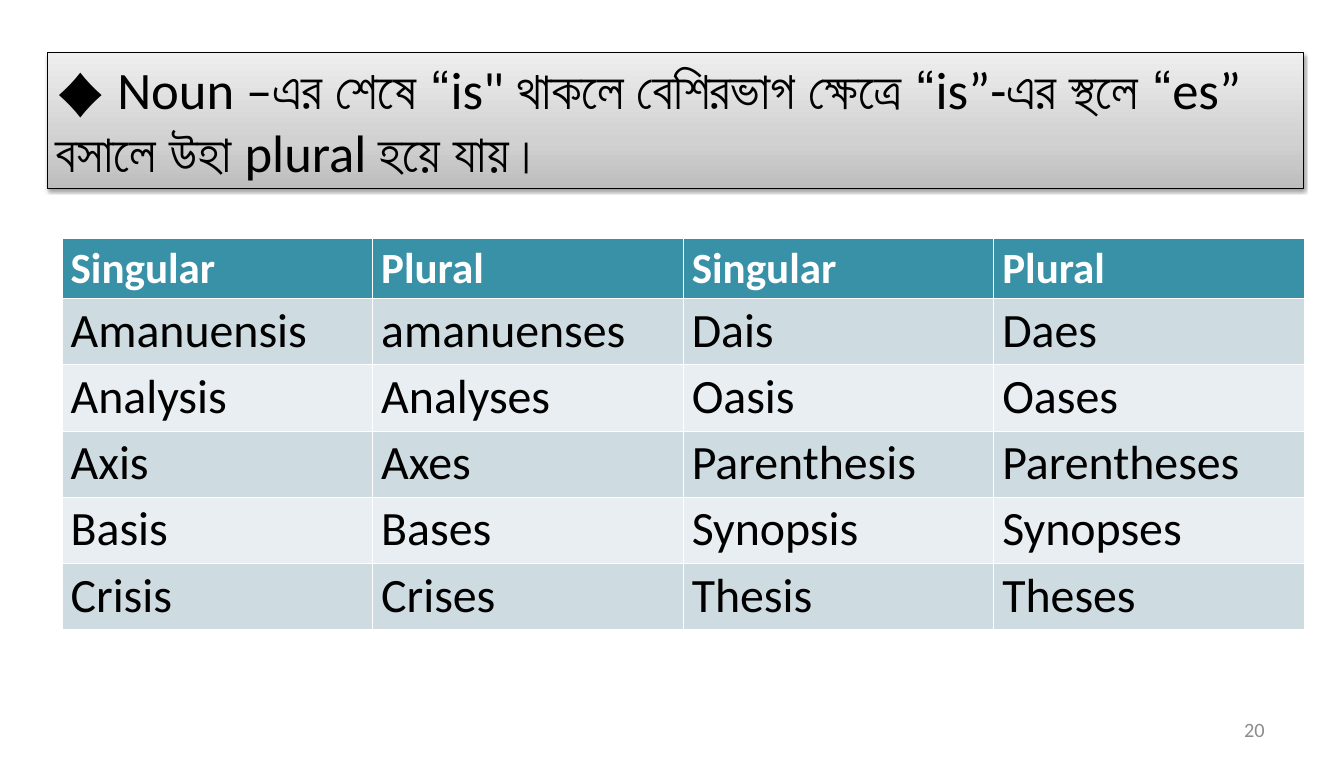
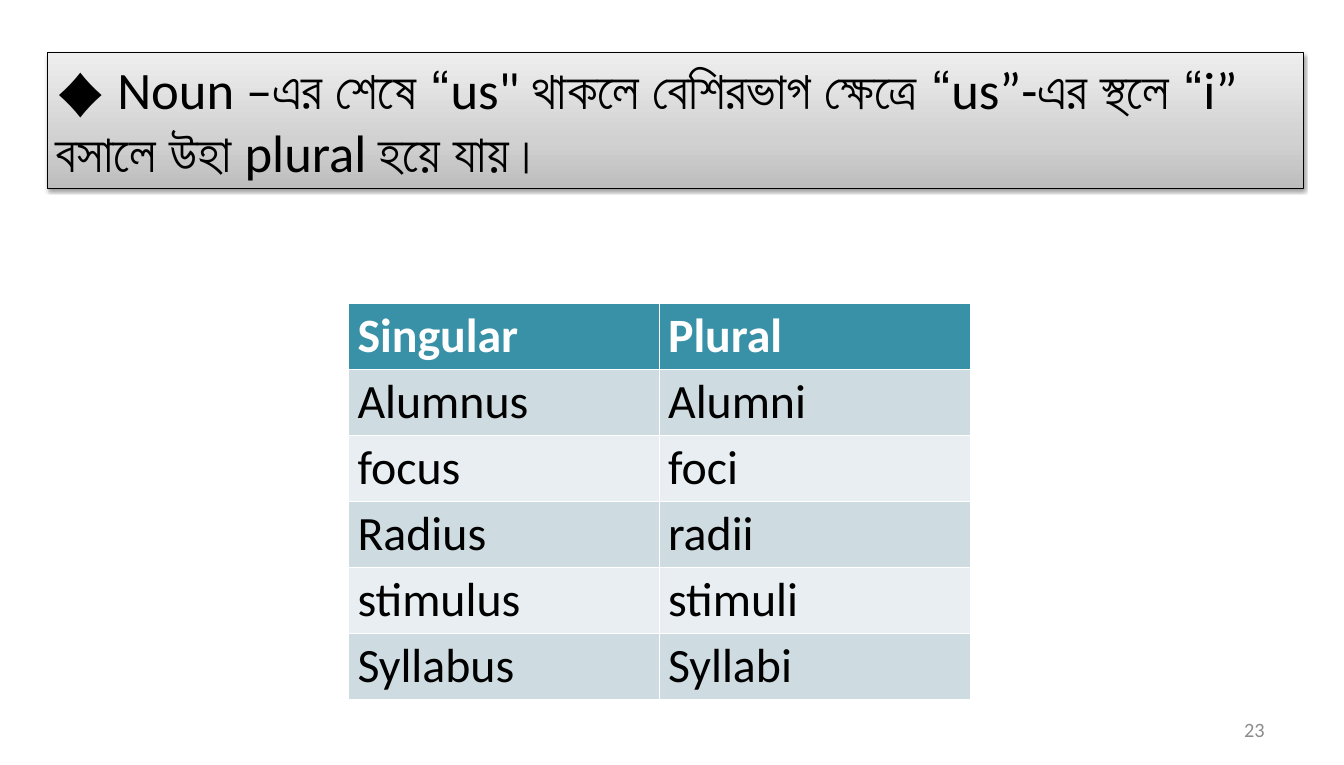
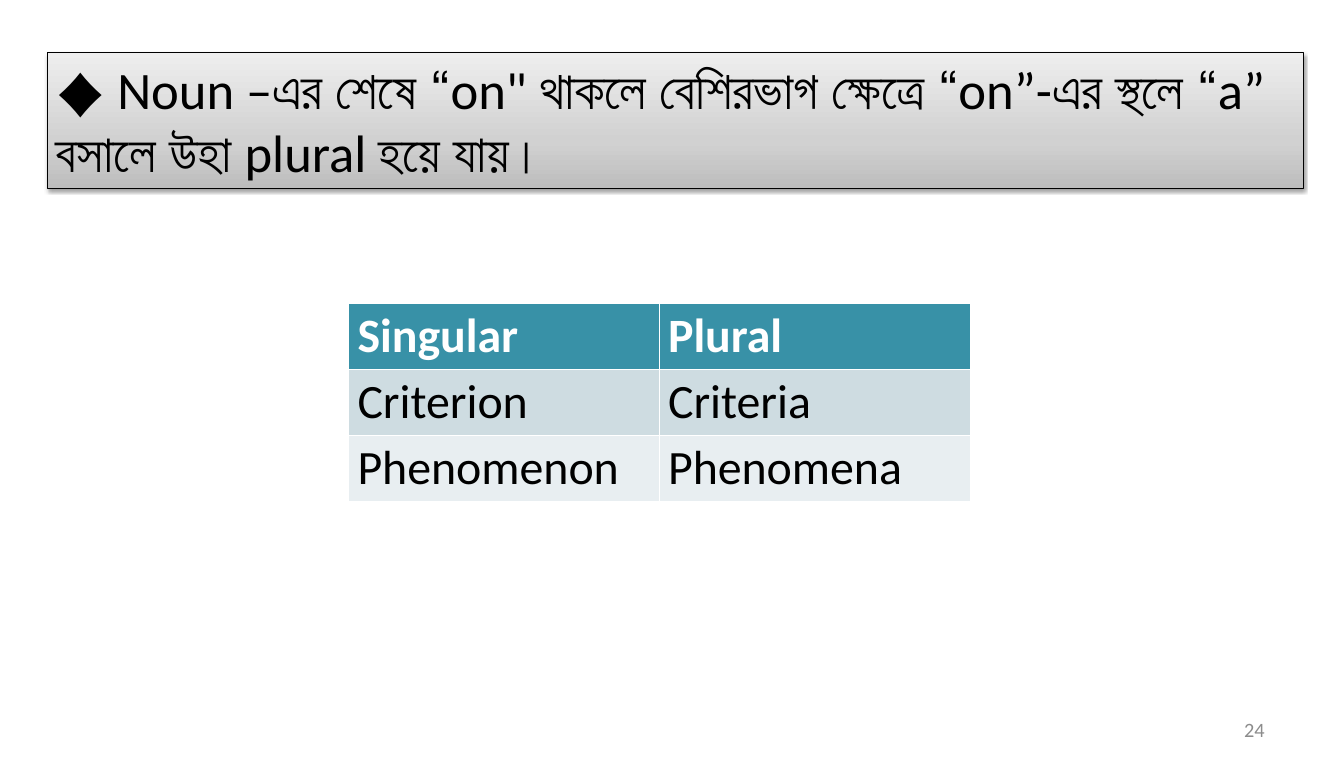
"""Build three grammar slides on irregular plurals, each with a rule and a word table."""
import dataclasses

import lxml.etree
import pptx
import pptx.dml.color
import pptx.enum.text
import pptx.oxml.ns
import pptx.util

Inches = pptx.util.Inches
Pt = pptx.util.Pt
Color = pptx.dml.color.RGBColor.from_string
qn = pptx.oxml.ns.qn


@dataclasses.dataclass(frozen=True)
class Theme:
    text_font: str = "Calibri"
    mark_font: str = "League Spartan"
    ink: str = "000000"
    paper: str = "FFFFFF"
    header: str = "3891A7"
    bands: tuple = ("CEDCE1", "E8EEF1")
    number: str = "8C8C8C"
    gradient: tuple = ((0, "BDBDBD"), (35, "D1D1D1"), (100, "EEEEEE"))
    mark_size: int = 41
    rule_size: int = 44
    word_size: int = 40
    number_size: int = 17


THEME = Theme()
COLUMN_WIDTH = 7.21 / 2
ROW_HEIGHT = 4.6 / 6
HEADINGS = ("Singular", "Plural")

LESSONS = [
    {
        "number": 20, "ending": "is", "plural": "es",
        "at": (0.72, 2.77), "header_size": 36, "header_height": 0.7,
        "words": [
            ("Amanuensis", "amanuenses", "Dais", "Daes"),
            ("Analysis", "Analyses", "Oasis", "Oases"),
            ("Axis", "Axes", "Parenthesis", "Parentheses"),
            ("Basis", "Bases", "Synopsis", "Synopses"),
            ("Crisis", "Crises", "Thesis", "Theses"),
        ],
    },
    {
        "number": 23, "ending": "us", "plural": "i",
        "at": (4.05, 3.52), "header_size": 40, "header_height": ROW_HEIGHT,
        "words": [
            ("Alumnus", "Alumni"),
            ("focus", "foci"),
            ("Radius", "radii"),
            ("stimulus", "stimuli"),
            ("Syllabus", "Syllabi"),
        ],
    },
    {
        "number": 24, "ending": "on", "plural": "a",
        "at": (4.05, 3.52), "header_size": 40, "header_height": ROW_HEIGHT,
        "words": [("Criterion", "Criteria"), ("Phenomenon", "Phenomena")],
    },
]


def add_span(para, text, size, color, font=THEME.text_font, bold=False):
    span = para.add_run()
    span.text = text
    span.font.name = font
    span.font.size = Pt(size)
    span.font.bold = bold
    span.font.color.rgb = Color(color)


def add_color(parent, color):
    return lxml.etree.SubElement(parent, qn("a:srgbClr"), val=color)


deck = pptx.Presentation()
deck.slide_width = Inches(15.6)
deck.slide_height = Inches(8.88)
title_only = deck.slide_layouts.get_by_name("Title Only")

for lesson in LESSONS:
    page = deck.slides.add_slide(title_only)

    rule = page.shapes.title
    rule.left, rule.top = Inches(0.55), Inches(0.61)
    rule.width, rule.height = Inches(14.58), Inches(1.58)
    rule.fill.gradient()
    rule.fill.gradient_angle = 90
    rule.line.color.rgb = Color(THEME.ink)
    rule.line.width = Pt(0.75)
    properties = rule.element.spPr
    stops = properties.find(".//" + qn("a:gsLst"))
    stops.clear()
    for percent, color in THEME.gradient:
        stop = lxml.etree.SubElement(stops, qn("a:gs"), pos=str(percent * 1000))
        add_color(stop, color)
    effects = lxml.etree.SubElement(properties, qn("a:effectLst"))
    shadow = lxml.etree.SubElement(
        effects, qn("a:outerShdw"), blurRad=str(Pt(3.1)), dist=str(Pt(1.6)),
        dir="5400000", rotWithShape="0")
    lxml.etree.SubElement(add_color(shadow, THEME.ink), qn("a:alpha"), val="38000")

    frame = rule.text_frame
    frame.word_wrap = True
    frame.auto_size = pptx.enum.text.MSO_AUTO_SIZE.SHAPE_TO_FIT_TEXT
    frame.vertical_anchor = pptx.enum.text.MSO_ANCHOR.TOP
    frame.margin_left = frame.margin_right = Inches(0.1)
    frame.margin_top = frame.margin_bottom = Inches(0.05)
    para = frame.paragraphs[0]
    para.alignment = pptx.enum.text.PP_ALIGN.LEFT
    add_span(para, "♦ ", THEME.mark_size, THEME.ink, THEME.mark_font)
    ending, plural = lesson["ending"], lesson["plural"]
    add_span(
        para,
        f"Noun –এর শেষে “{ending}\" থাকলে বেশিরভাগ ক্ষেত্রে “{ending}”-এর স্থলে "
        f"“{plural}” বসালে উহা plural হয়ে যায়।",
        THEME.rule_size, THEME.ink)

    words = lesson["words"]
    column_count = len(words[0])
    rows = [HEADINGS * (column_count // 2)] + words
    left, top = lesson["at"]
    table = page.shapes.add_table(
        len(rows), column_count, Inches(left), Inches(top),
        Inches(COLUMN_WIDTH * column_count),
        Inches(lesson["header_height"] + ROW_HEIGHT * len(words))).table
    for column in table.columns:
        column.width = Inches(COLUMN_WIDTH)
    for row_index, row in enumerate(rows):
        is_header = row_index == 0
        table.rows[row_index].height = Inches(
            lesson["header_height"] if is_header else ROW_HEIGHT)
        fill = THEME.header if is_header else THEME.bands[(row_index - 1) % 2]
        size = lesson["header_size"] if is_header else THEME.word_size
        ink = THEME.paper if is_header else THEME.ink
        for column_index, word in enumerate(row):
            cell = table.cell(row_index, column_index)
            cell.margin_top = cell.margin_bottom = Inches(0.04)
            cell.fill.solid()
            cell.fill.fore_color.rgb = Color(fill)
            add_span(cell.text_frame.paragraphs[0], word, size, ink, bold=is_header)

    number_box = page.shapes.add_textbox(
        Inches(11.18), Inches(8.23), Inches(3.64), Inches(0.47))
    frame = number_box.text_frame
    frame.word_wrap = True
    frame.vertical_anchor = pptx.enum.text.MSO_ANCHOR.MIDDLE
    frame.margin_left = frame.margin_right = Inches(0.14)
    frame.margin_top = frame.margin_bottom = Inches(0.07)
    para = frame.paragraphs[0]
    para.alignment = pptx.enum.text.PP_ALIGN.RIGHT
    add_span(para, str(lesson["number"]), THEME.number_size, THEME.number)

deck.save("out.pptx")
